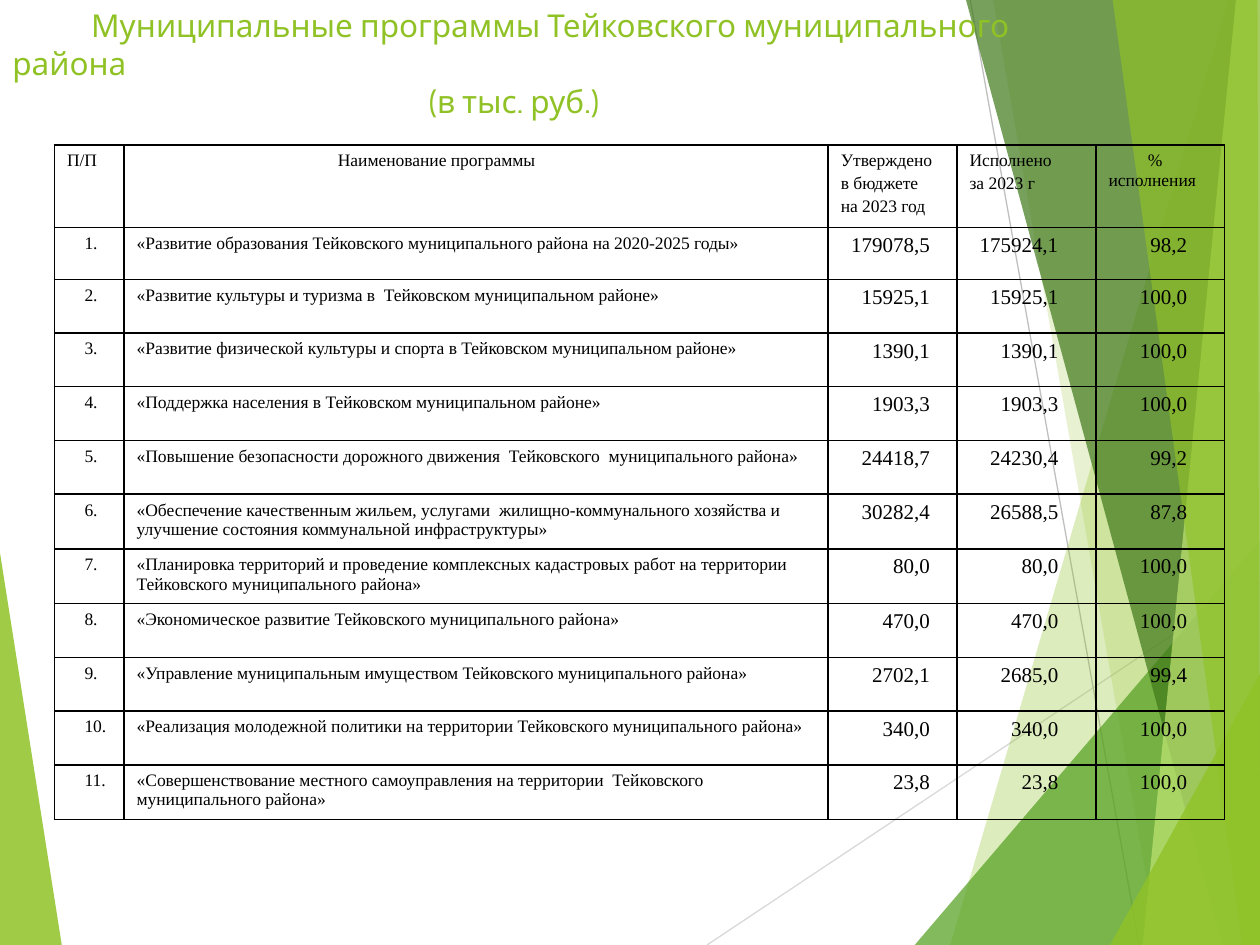
from lxml.etree import SubElement as Sub
from pptx import Presentation
from pptx.dml.color import RGBColor
from pptx.enum.text import PP_ALIGN as Align
from pptx.oxml.ns import qn
from pptx.util import Pt

LIME = RGBColor(0x90, 0xC2, 0x26)
GREEN = RGBColor(0x54, 0xA0, 0x21)
DARK = RGBColor(0x3F, 0x78, 0x19)
PALE = RGBColor(0xC0, 0xE4, 0x74)
BLACK = RGBColor(0, 0, 0)
LIGHT = RGBColor(0xD9, 0xD9, 0xD9)
GREY = RGBColor(0xBF, 0xBF, 0xBF)

deck = Presentation()
deck.slide_width, deck.slide_height = Pt(720), Pt(540)
slide = deck.slides.add_slide(deck.slide_layouts[6])
shapes = slide.shapes


def add_facet(points, color, alpha):
    spots = [(Pt(x), Pt(y)) for x, y in points]
    form = shapes.build_freeform(*spots[0], scale=1.0)
    form.add_line_segments(spots[1:], close=True)
    facet = form.convert_to_shape()
    facet.shadow.inherit = False
    facet.line.fill.background()
    facet.fill.solid()
    facet.fill.fore_color.rgb = color
    tint = facet._element.spPr.find(qn("a:solidFill"))[0]
    Sub(tint, qn("a:alpha"), val=str(alpha * 1000))


def add_text(para, text, font, size, color, left=0, first=0):
    props = para._p.get_or_add_pPr()
    props.set("marL", str(Pt(left)))
    props.set("indent", str(Pt(first)))
    run = para.add_run()
    run.text = text
    run.font.name = font
    run.font.size = Pt(size)
    run.font.color.rgb = color


add_facet([(0, 316), (35.3, 540), (0, 540)], LIME, 85)

lines = [(404, 540, 720, 329.5, LIGHT), (554.4, 0, 651, 540, GREY)]
for x1, y1, x2, y2, color in lines:
    line = shapes.add_connector(1, Pt(x1), Pt(y1), Pt(x2), Pt(y2))
    line.line.color.rgb = color
    line.line.width = Pt(0.75)
    Sub(line._element.spPr, qn("a:effectLst"))

low, high = (720, 540), (720, 0)
facets = [
    ([(702, 0), (543, 540), low, high], LIME, 30),
    ([(567.5, 0), (661.7, 540), low, high], LIME, 20),
    ([(522.7, 540), (720, 309), low], GREEN, 72),
    ([(552, 0), (698.4, 540), low, high], DARK, 70),
    ([(706.3, 0), (653, 540), low, high], PALE, 70),
    ([(635.8, 0), (710, 540), low, (718.6, 0)], LIME, 65),
    ([(634.3, 540), (720, 385), low], LIME, 80),
]
for facet in facets:
    add_facet(*facet)

title = shapes.add_textbox(0, 0, Pt(647.3), Pt(102)).text_frame
title.word_wrap = True
add_text(title.paragraphs[0], "Муниципальные программы Тейковского муниципального района",
         "Cabin", 18, LIME, first=45)
add_text(title.add_paragraph(), "(в тыс. руб.)", "Cabin", 18, LIME, left=238)

heads = ["П/П", "Наименование программы", "Утверждено\nв бюджете\nна 2023 год",
         "Исполнено\nза 2023 г", "% исполнения"]
plans = [
    ("«Развитие образования Тейковского муниципального района на 2020-2025 годы»",
     "179078,5", "175924,1", "98,2"),
    ("«Развитие культуры и туризма в  Тейковском муниципальном районе»",
     "15925,1", "15925,1", "100,0"),
    ("«Развитие физической культуры и спорта в Тейковском муниципальном районе»",
     "1390,1", "1390,1", "100,0"),
    ("«Поддержка населения в Тейковском муниципальном районе»",
     "1903,3", "1903,3", "100,0"),
    ("«Повышение безопасности дорожного движения  Тейковского  муниципального района»",
     "24418,7", "24230,4", "99,2"),
    ("«Обеспечение качественным жильем, услугами  жилищно-коммунального хозяйства и "
     "улучшение состояния коммунальной инфраструктуры»",
     "30282,4", "26588,5", "87,8"),
    ("«Планировка территорий и проведение комплексных кадастровых работ на территории  "
     "Тейковского муниципального района»",
     "80,0", "80,0", "100,0"),
    ("«Экономическое развитие Тейковского муниципального района»",
     "470,0", "470,0", "100,0"),
    ("«Управление муниципальным имуществом Тейковского муниципального района»",
     "2702,1", "2685,0", "99,4"),
    ("«Реализация молодежной политики на территории Тейковского муниципального района»",
     "340,0", "340,0", "100,0"),
    ("«Совершенствование местного самоуправления на территории  Тейковского  "
     "муниципального района»",
     "23,8", "23,8", "100,0"),
]
rows = [heads] + [(f"{n}.", *plan) for n, plan in enumerate(plans, 1)]
widths = [39.8, 402.4, 73.6, 79.4, 73.6]
heights = [44, 29.5] + [30.7] * 4 + [29.2] * 2 + [30.7] * 4
gaps = {2: 15.5, 3: 21.5, 4: 21.5}

table = shapes.add_table(len(rows), len(widths), Pt(31.1), Pt(82.8),
                         Pt(sum(widths)), Pt(sum(heights))).table
table.first_row = table.horz_banding = False
for col, width in zip(table.columns, widths):
    col.width = Pt(width)
for row, height in zip(table.rows, heights):
    row.height = Pt(height)

for r, row in enumerate(rows):
    for c, text in enumerate(row):
        cell = table.cell(r, c)
        props = cell._tc.get_or_add_tcPr()
        for side in ("lnL", "lnR", "lnT", "lnB"):
            edge = Sub(props, qn(f"a:{side}"), w=str(Pt(1)))
            paint = Sub(edge, qn("a:solidFill"))
            Sub(paint, qn("a:srgbClr"), val=str(BLACK))
        cell.fill.background()
        number = r > 0 and c in gaps
        if number:
            cell.margin_right = Pt(gaps[c])
        left = 10 if r and c == 0 else 0
        first = {1: 115, 4: 22.5}.get(c, 0) if r == 0 else 0
        frame = cell.text_frame
        for n, part in enumerate(text.split("\n")):
            para = frame.add_paragraph() if n else frame.paragraphs[0]
            add_text(para, part, "Times New Roman", 12 if number else 10, BLACK, left, first)
            if n:
                para.space_before = Pt(2)
            if number:
                para.alignment = Align.RIGHT

deck.save("out.pptx")
